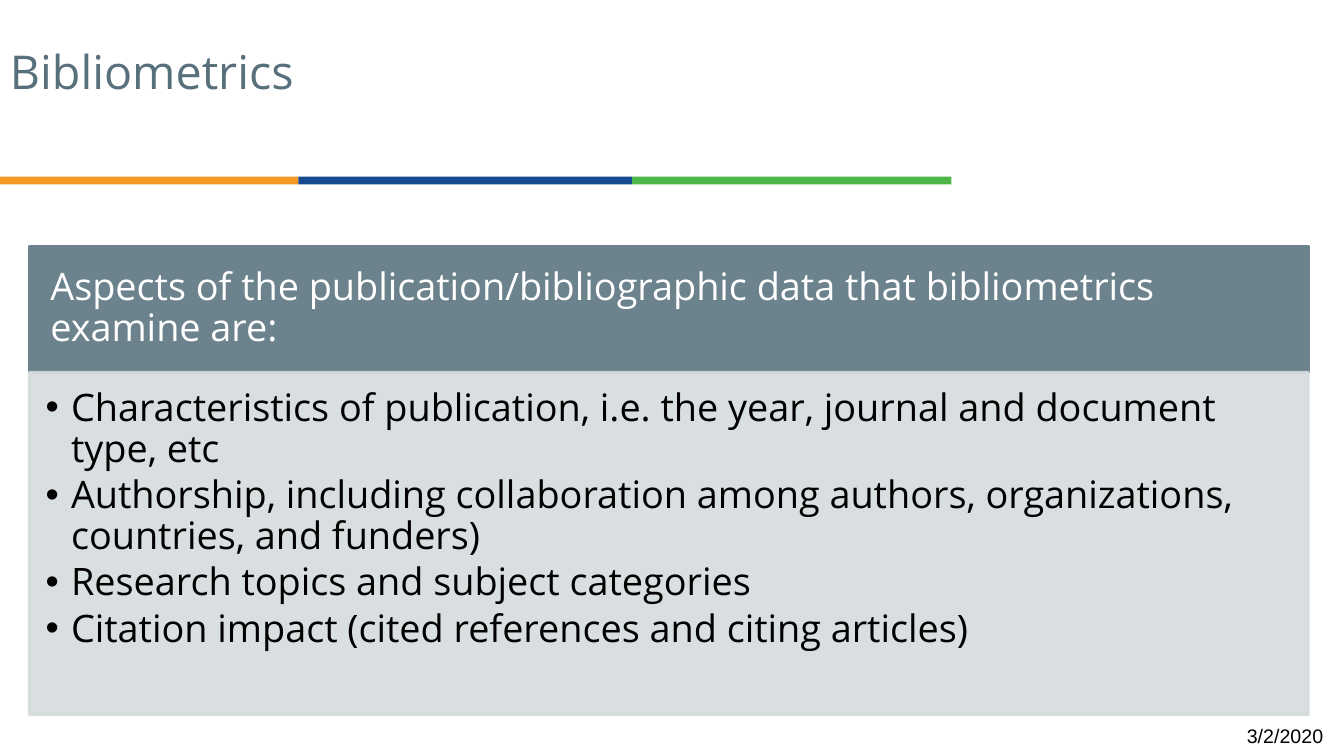
from dataclasses import dataclass

from lxml.etree import SubElement
from pptx import Presentation
from pptx.dml.color import RGBColor
from pptx.enum.shapes import MSO_SHAPE
from pptx.enum.text import MSO_ANCHOR, MSO_AUTO_SIZE, PP_ALIGN
from pptx.oxml.ns import qn
from pptx.util import Cm, Pt

COLOURS = {
    "orange": "F49925",
    "blue": "154A90",
    "green": "4EB748",
    "title": "586F7C",
    "header": "6C828C",
    "panel": "D5DBDD",
    "white": "FFFFFF",
    "black": "000000",
}
BODY_FONT = "Open Sans"
BULLET_INDENT = Cm(0.64)
PANEL_LEFT, PANEL_WIDTH = 0.74, 32.23
HEADER_TOP, HEADER_HEIGHT, LIST_HEIGHT = 6.2, 3.18, 8.63

ASPECTS = [
    "Characteristics of publication, i.e. the year, journal and document type, etc",
    "Authorship, including collaboration among authors, organizations, countries, and funders)",
    "Research topics and subject categories",
    "Citation impact (cited references and citing articles)",
]


@dataclass
class Band:
    colour: str
    width: float


@dataclass
class TextStyle:
    size: float
    colour: str
    font: str = BODY_FONT
    alignment: PP_ALIGN = PP_ALIGN.LEFT
    line_spacing: float = 0.9


BANDS = [Band("orange", 7.52), Band("blue", 8.41), Band("green", 8.05)]
TITLE_STYLE = TextStyle(33.3, "title")
HEADER_STYLE = TextStyle(27, "white")
LIST_STYLE = TextStyle(27, "black")
DATE_STYLE = TextStyle(14, "black", "Arial", PP_ALIGN.RIGHT, 1.0)


def colour(name: str) -> RGBColor:
    return RGBColor.from_string(COLOURS[name])


def place(shape, left: float, top: float, width: float, height: float) -> None:
    shape.left, shape.top = Cm(left), Cm(top)
    shape.width, shape.height = Cm(width), Cm(height)


def set_frame(shape, insets: tuple, anchor: MSO_ANCHOR) -> None:
    """Set wrapping, anchor and the left, top, right and bottom insets in cm."""
    frame = shape.text_frame
    frame.word_wrap = True
    frame.auto_size = MSO_AUTO_SIZE.NONE
    frame.vertical_anchor = anchor
    (frame.margin_left, frame.margin_top,
     frame.margin_right, frame.margin_bottom) = map(Cm, insets)


def write(paragraph, text: str, style: TextStyle, space_before: float = 0) -> None:
    paragraph.alignment = style.alignment
    paragraph.line_spacing = style.line_spacing
    paragraph.space_before = Pt(space_before)
    run = paragraph.add_run()
    run.text = text
    run.font.name = style.font
    run.font.size = Pt(style.size)
    run.font.color.rgb = colour(style.colour)


def add_bullet(paragraph) -> None:
    properties = paragraph._p.get_or_add_pPr()
    properties.set("marL", str(BULLET_INDENT))
    properties.set("indent", str(-BULLET_INDENT))
    bullet_colour = SubElement(properties, qn("a:buClr"))
    SubElement(bullet_colour, qn("a:srgbClr"), val=COLOURS["black"])
    SubElement(properties, qn("a:buFont"), typeface="Arial")
    SubElement(properties, qn("a:buChar"), char="•")


def paint(shape, name: str) -> None:
    """Give fill and outline the same colour."""
    shape.fill.solid()
    shape.fill.fore_color.rgb = colour(name)
    shape.line.color.rgb = colour(name)
    shape.line.width = Pt(2)


def set_opacity(shape, percent: int) -> None:
    for element in shape._element.spPr.iter(qn("a:srgbClr")):
        SubElement(element, qn("a:alpha"), val=str(percent * 1000))


def add_rectangle(slide, left: float, top: float, width: float, height: float):
    shape = slide.shapes.add_shape(
        MSO_SHAPE.RECTANGLE, Cm(left), Cm(top), Cm(width), Cm(height))
    shape.shadow.inherit = False
    return shape


def add_bands(slide) -> None:
    left = 0
    for band in BANDS:
        shape = add_rectangle(slide, left, 4.45, band.width, 0.2)
        shape.fill.solid()
        shape.fill.fore_color.rgb = colour(band.colour)
        shape.line.fill.background()
        left += band.width


def add_title(slide) -> None:
    title = slide.shapes.title
    place(title, 0, 1.12, 22.78, 3)
    set_frame(title, (0.25, 0.13, 0.25, 0.13), MSO_ANCHOR.TOP)
    write(title.text_frame.paragraphs[0], "Bibliometrics", TITLE_STYLE)


def add_header(slide) -> None:
    header = add_rectangle(slide, PANEL_LEFT, HEADER_TOP, PANEL_WIDTH, HEADER_HEIGHT)
    paint(header, "header")
    set_frame(header, (0.53, 0.3, 0.53, 0.3), MSO_ANCHOR.MIDDLE)
    write(header.text_frame.paragraphs[0],
          "Aspects of the publication/bibliographic data that bibliometrics examine are:",
          HEADER_STYLE)


def add_aspect_list(slide) -> None:
    body = slide.placeholders[1]
    slide.shapes._spTree.append(body._element)  # in front of the header
    place(body, PANEL_LEFT, HEADER_TOP + HEADER_HEIGHT, PANEL_WIDTH, LIST_HEIGHT)
    paint(body, "panel")
    set_opacity(body, 90)
    set_frame(body, (0.41, 0.41, 0.53, 0.61), MSO_ANCHOR.TOP)
    frame = body.text_frame
    for index, aspect in enumerate(ASPECTS):
        paragraph = frame.add_paragraph() if index else frame.paragraphs[0]
        add_bullet(paragraph)
        write(paragraph, aspect, LIST_STYLE, 4 if index else 0)


def add_date(slide) -> None:
    date = slide.shapes.add_textbox(Cm(25.98), Cm(18.03), Cm(7.62), Cm(1.02))
    set_frame(date, (0.25, 0.13, 0.25, 0.13), MSO_ANCHOR.MIDDLE)
    write(date.text_frame.paragraphs[0], "3/2/2020", DATE_STYLE)


def main() -> None:
    presentation = Presentation()
    presentation.slide_width, presentation.slide_height = Cm(33.87), Cm(19.05)
    slide = presentation.slides.add_slide(presentation.slide_layouts[1])
    add_bands(slide)
    add_title(slide)
    add_date(slide)
    add_header(slide)
    add_aspect_list(slide)
    presentation.save("out.pptx")


if __name__ == "__main__":
    main()
